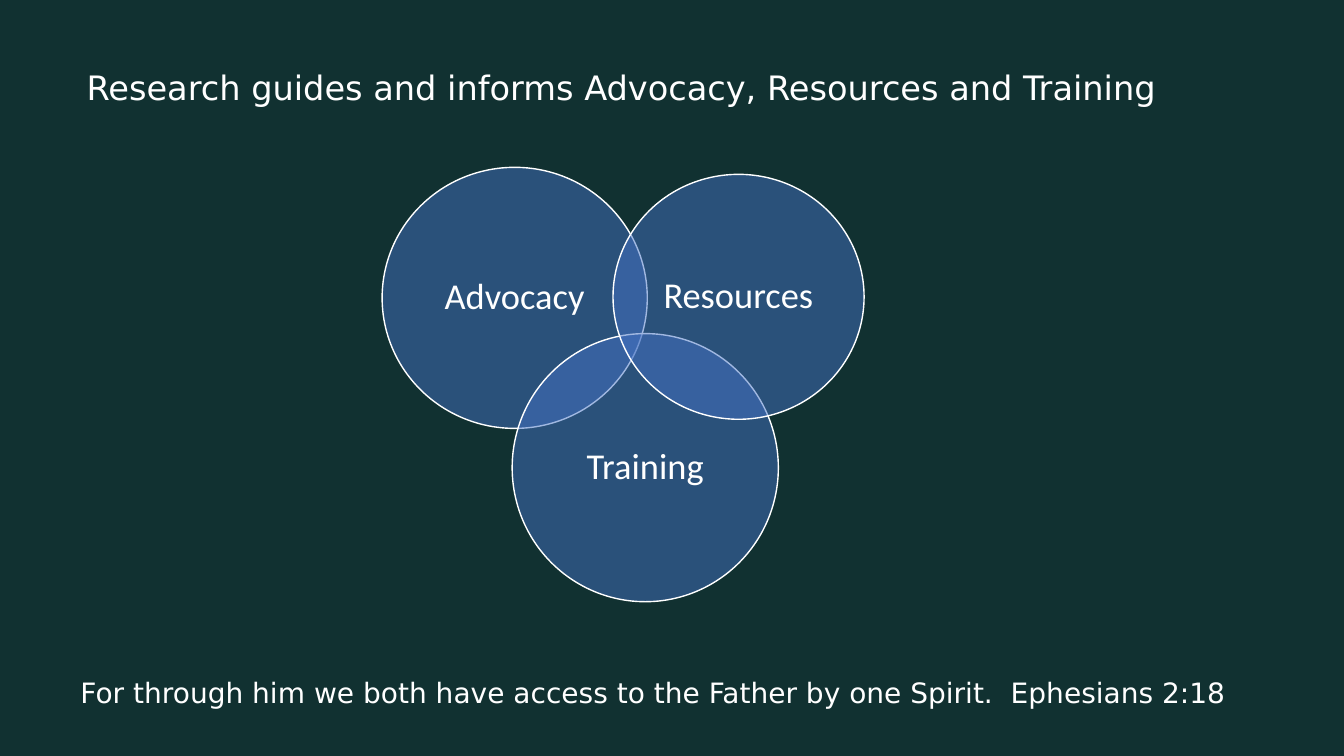
from lxml import etree
from pptx import Presentation
from pptx.dml.color import RGBColor
from pptx.enum import shapes, text
from pptx.oxml import ns
from pptx.util import Inches, Pt

theme = {
    "back": RGBColor.from_string("113131"),
    "disc": RGBColor.from_string("4472C4"),
    "white": RGBColor.from_string("FFFFFF"),
    "body": "DejaVu Sans",
    "label": "Calibri",
    "title": Pt(24),
    "verse": Pt(20),
    "name": Pt(26),
}

deck = Presentation()
deck.slide_width = Inches(13.33)
deck.slide_height = Inches(7.5)
slide = deck.slides.add_slide(deck.slide_layouts[6])
slide.background.fill.solid()
slide.background.fill.fore_color.rgb = theme["back"]


def write(words, spot, size, font):
    box = slide.shapes.add_textbox(*map(Inches, spot))
    frame = box.text_frame
    frame.word_wrap = True
    line = frame.paragraphs[0]
    line.text = words
    line.font.size = size
    line.font.name = font
    line.font.color.rgb = theme["white"]
    return frame


write(
    "For through him we both have access to the Father by one Spirit.  Ephesians 2:18",
    (0.7, 6.65, 11.96, 0.44), theme["verse"], theme["body"],
)

circles = [
    ("Advocacy", 3.79, 1.66, 2.63, 2.59),
    ("Training", 5.08, 3.31, 2.64, 2.66),
    ("Resources", 6.08, 1.73, 2.49, 2.43),
]
inner = 0.5 ** 0.5
edge = (1 - inner) / 2
for name, left, top, width, height in circles:
    disc = slide.shapes.add_shape(
        shapes.MSO_SHAPE.OVAL, *map(Inches, (left, top, width, height))
    )
    disc.shadow.inherit = False
    disc.fill.solid()
    disc.fill.fore_color.rgb = theme["disc"]
    shade = disc.fill._xPr.find(".//" + ns.qn("a:srgbClr"))
    etree.SubElement(shade, ns.qn("a:alpha"), val="50000")
    disc.line.color.rgb = theme["white"]
    disc.line.width = Pt(1)

    spot = (left + width * edge, top + height * edge, width * inner, height * inner)
    frame = write(name, spot, theme["name"], theme["label"])
    frame.vertical_anchor = text.MSO_ANCHOR.MIDDLE
    frame.margin_left = frame.margin_right = Inches(0.11)
    frame.margin_top = frame.margin_bottom = Inches(0.11)
    frame.paragraphs[0].alignment = text.PP_ALIGN.CENTER
    frame.paragraphs[0].line_spacing = 0.9

write(
    "Research guides and informs Advocacy, Resources and Training",
    (0.76, 0.61, 12.21, 0.5), theme["title"], theme["body"],
)

deck.save("out.pptx")
